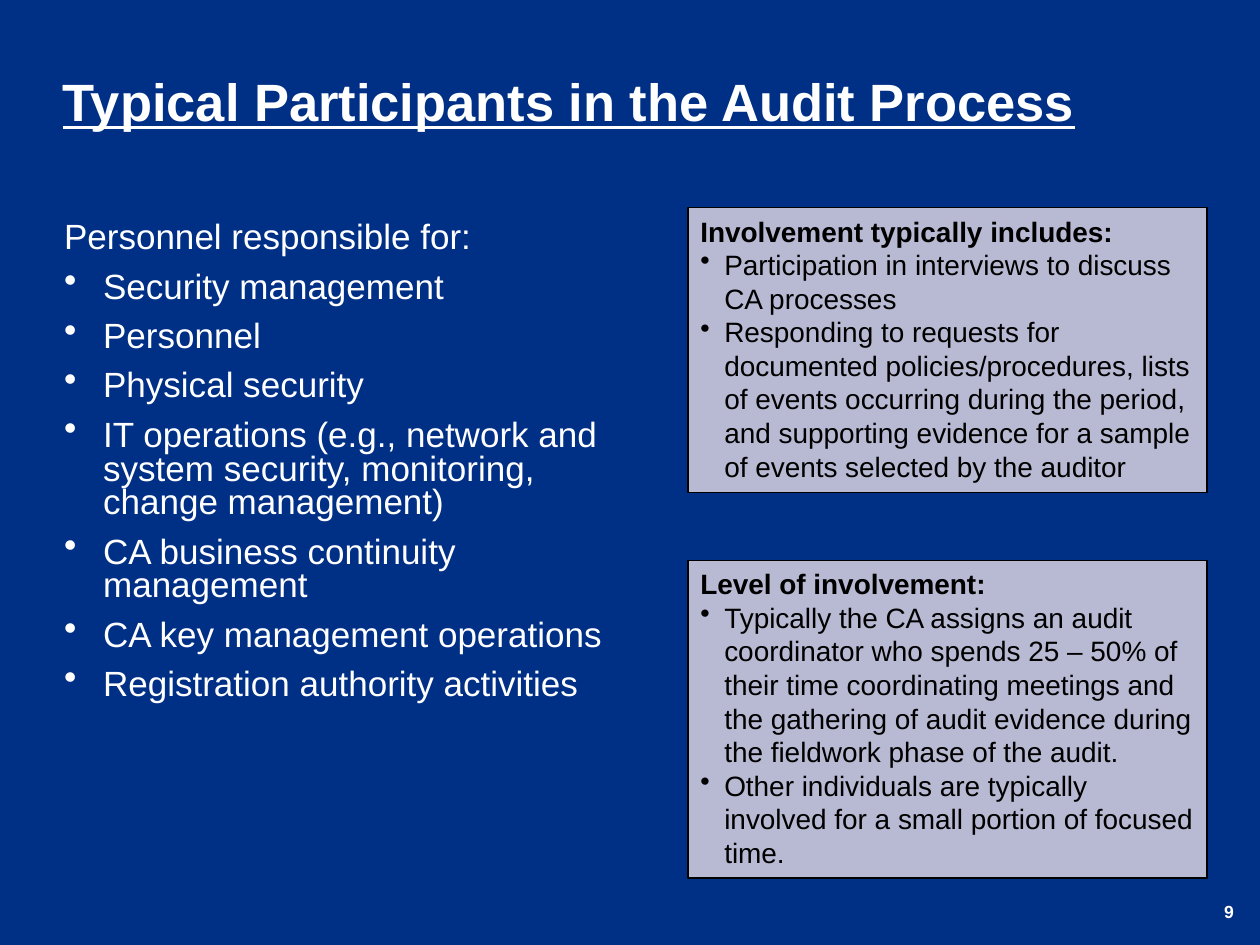
from dataclasses import dataclass

from lxml import etree
from pptx import Presentation
from pptx.dml.color import RGBColor
from pptx.enum.shapes import MSO_SHAPE
from pptx.enum.text import MSO_ANCHOR, MSO_AUTO_SIZE, PP_ALIGN
from pptx.oxml import parse_xml
from pptx.oxml.ns import nsdecls, qn
from pptx.util import Inches, Pt

RECTANGLE = MSO_SHAPE.RECTANGLE
TOP, MIDDLE, BOTTOM = MSO_ANCHOR.TOP, MSO_ANCHOR.MIDDLE, MSO_ANCHOR.BOTTOM
LEFT, RIGHT = PP_ALIGN.LEFT, PP_ALIGN.RIGHT
GROW = MSO_AUTO_SIZE.SHAPE_TO_FIT_TEXT

PARTICIPANTS = [
    "Security management",
    "Personnel",
    "Physical security",
    "IT operations (e.g., network and system security, monitoring, change management)",
    "CA business continuity management",
    "CA key management operations",
    "Registration authority activities",
]
PANELS = [
    (22, 30.13, "Involvement typically includes:", [
        "Participation in interviews to discuss CA processes",
        "Responding to requests for documented policies/procedures, lists of events "
        "occurring during the period, and supporting evidence for a sample of events "
        "selected by the auditor",
    ]),
    (59.33, 33.6, "Level of involvement:", [
        "Typically the CA assigns an audit coordinator who spends 25 – 50% of their time "
        "coordinating meetings and the gathering of audit evidence during the fieldwork "
        "phase of the audit.",
        "Other individuals are typically involved for a small portion of focused time.",
    ]),
]


@dataclass(frozen=True)
class Theme:
    font: str = "Arial"
    background: RGBColor = RGBColor.from_string("002F86")
    light: RGBColor = RGBColor.from_string("FFFFFF")
    dark: RGBColor = RGBColor.from_string("000000")
    panel: RGBColor = RGBColor.from_string("B8B9D2")
    title_size: int = 30
    body_size: int = 20
    panel_size: int = 16
    number_size: int = 10


class SlideBuilder:
    def __init__(self, deck, theme):
        self.deck, self.theme = deck, theme
        self.page = deck.slides.add_slide(deck.slide_layouts[6])
        fill = self.page.background.fill
        fill.solid()
        fill.fore_color.rgb = theme.background

    def place(self, left, top, width, height):
        across, down = self.deck.slide_width / 100, self.deck.slide_height / 100
        return [round(n) for n in (left * across, top * down, width * across, height * down)]

    def text_box(self, area, anchor=TOP):
        frame = self.page.shapes.add_textbox(*self.place(*area)).text_frame
        frame.word_wrap = True
        frame.vertical_anchor = anchor
        return frame

    def add_span(self, para, text, size, color, bold=False, underline=None, shadow=False):
        span = para.add_run()
        span.text = text
        font = span.font
        font.name, font.size, font.bold = self.theme.font, Pt(size), bold
        font.underline = underline
        font.color.rgb = color
        if shadow:
            effect = parse_xml(
                f'<a:effectLst {nsdecls("a")}><a:outerShdw dist="38100" dir="2700000">'
                f'<a:srgbClr val="{self.theme.dark}"/></a:outerShdw></a:effectLst>')
            span._r.get_or_add_rPr().find(qn("a:solidFill")).addnext(effect)

    def bullet(self, para, indent, percent=100):
        properties = para._p.get_or_add_pPr()
        properties.set("marL", str(Inches(indent)))
        properties.set("indent", str(-Inches(indent)))
        etree.SubElement(properties, qn("a:buSzPct"), val=str(percent * 1000))
        etree.SubElement(properties, qn("a:buChar"), char="•")

    def title(self, area, text):
        para = self.text_box(area, MIDDLE).paragraphs[0]
        self.add_span(para, text, self.theme.title_size, self.theme.light, True, True, True)

    def body(self, area, heading, items):
        frame = self.text_box(area)
        para = frame.paragraphs[0]
        para.line_spacing = 0.8
        self.add_span(para, heading, self.theme.body_size, self.theme.light, shadow=True)
        for item in items:
            para = frame.add_paragraph()
            self.bullet(para, 0.31, 105)
            para.line_spacing, para.space_before = 0.8, Pt(9)
            self.add_span(para, item, self.theme.body_size, self.theme.light, shadow=True)

    def panel(self, area, heading, items):
        theme = self.theme
        box = self.page.shapes.add_shape(RECTANGLE, *self.place(*area))
        box.shadow.inherit = False
        box.fill.solid()
        box.fill.fore_color.rgb = theme.panel
        box.line.color.rgb = theme.dark
        box.line.width = Pt(0.75)
        frame = box.text_frame
        frame.word_wrap, frame.auto_size, frame.vertical_anchor = True, GROW, TOP
        para = frame.paragraphs[0]
        para.alignment = LEFT
        self.add_span(para, heading, theme.panel_size, theme.dark, bold=True)
        for item in items:
            para = frame.add_paragraph()
            para.alignment = LEFT
            self.bullet(para, 0.19)
            self.add_span(para, item, theme.panel_size, theme.dark)

    def page_number(self, area, text):
        para = self.text_box(area, BOTTOM).paragraphs[0]
        para.alignment = RIGHT
        self.add_span(para, text, self.theme.number_size, self.theme.light, bold=True)


def main():
    deck = Presentation()
    deck.slide_width, deck.slide_height = Inches(10), Inches(7.5)
    slide = SlideBuilder(deck, Theme())
    slide.page_number((92.2, 93.87, 6.7, 4.4), "9")
    slide.title((4, 2.53, 91.8, 16.27), "Typical Participants in the Audit Process")
    slide.body((4.1, 22.93, 48.1, 66), "Personnel responsible for:", PARTICIPANTS)
    for top, height, heading, items in PANELS:
        slide.panel((54.6, top, 41.2, height), heading, items)
    deck.save("out.pptx")


if __name__ == "__main__":
    main()
